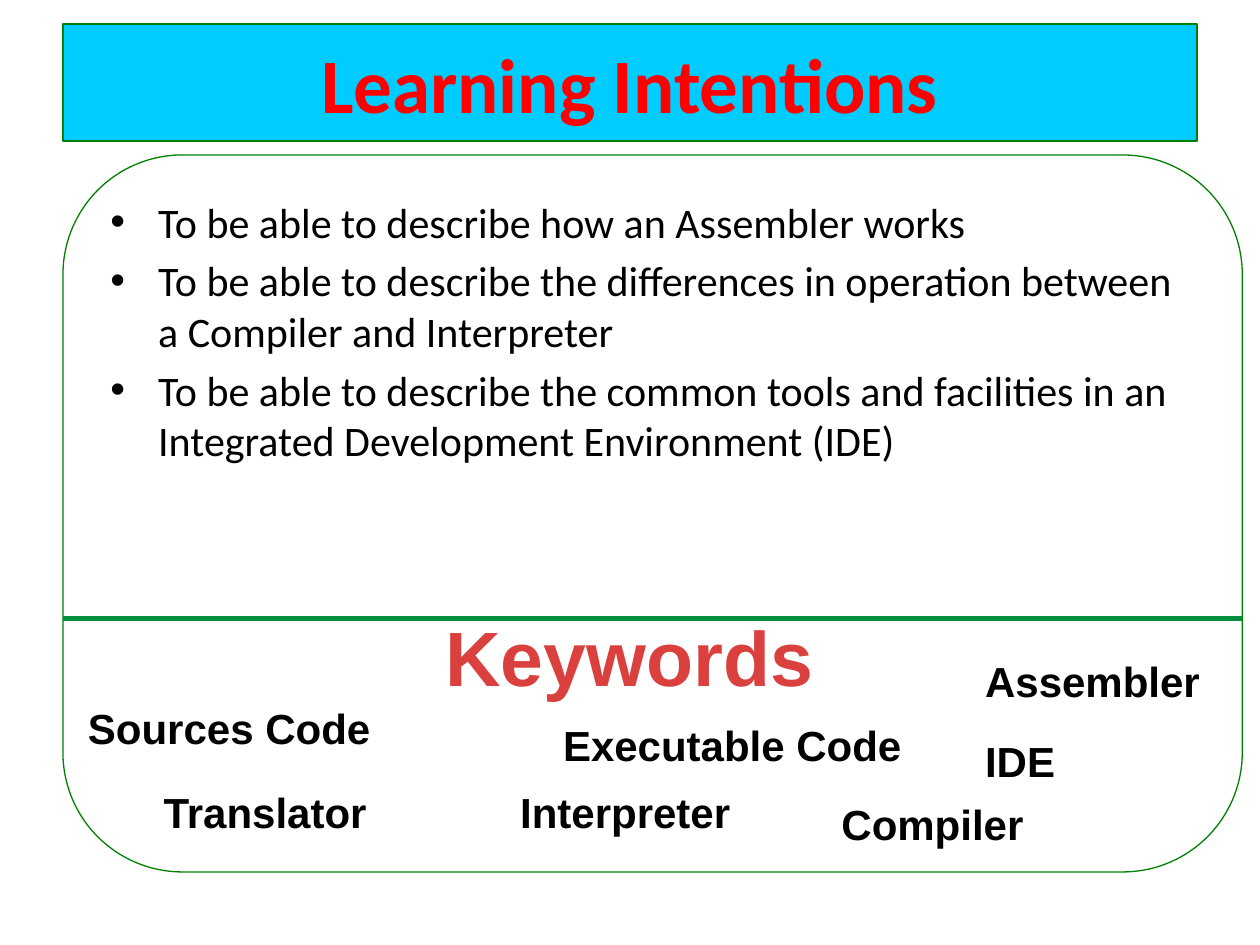
"""Build the Learning Intentions slide with its keywords."""
from lxml.etree import SubElement
from pptx import Presentation
from pptx.dml.color import RGBColor
from pptx.enum.shapes import MSO_CONNECTOR as Link, MSO_SHAPE as Shape
from pptx.enum.text import MSO_ANCHOR as Anchor, MSO_AUTO_SIZE as Fit, PP_ALIGN as Align
from pptx.oxml.ns import qn
from pptx.util import Inches, Pt

CYAN = RGBColor(0x00, 0xCC, 0xFF)
RED = RGBColor(0xFF, 0x00, 0x00)
ROSE = RGBColor(0xDA, 0x41, 0x3E)
EDGE = RGBColor(0x00, 0x80, 0x00)
GREEN = RGBColor(0x00, 0x8E, 0x40)
BLACK = RGBColor(0x00, 0x00, 0x00)

TITLE = "Learning Intentions"
AIMS = [
    "To be able to describe how an Assembler works",
    "To be able to describe the differences in operation between a Compiler and Interpreter",
    "To be able to describe the common tools and facilities in an "
    "Integrated Development Environment (IDE)",
]
HEAD = ("Keywords", 3.42, 4.79, 3.15)
WORDS = [
    ("Sources Code", 0.6, 5.53, 2.47),
    ("Executable Code", 4.37, 5.66, 2.91),
    ("Translator", 1.2, 6.19, 1.83),
    ("Compiler", 6.58, 6.29, 1.66),
    ("Interpreter", 4.03, 6.19, 1.89),
    ("Assembler", 7.72, 5.15, 1.93),
    ("IDE", 7.72, 5.79, 0.76),
]
LEFT, WIDE, RULE = 0.5, 9.36, 4.91
INDENT = 0.38

BIG = dict(name="Calibri", size=Pt(44), bold=True)
PLAIN = dict(name="Calibri", size=Pt(24), bold=False)
BOLD = dict(name="Arial", size=Pt(24), bold=True)
LARGE = dict(name="Arial", size=Pt(44), bold=True)


def style(para, form, color):
    for key, value in form.items():
        setattr(para.font, key, value)
    para.font.color.rgb = color


def panel(slide, kind, *place):
    shape = slide.shapes.add_shape(kind, *map(Inches, place))
    shape.shadow.inherit = False
    shape.fill.background()
    shape.line.color.rgb = EDGE
    shape.line.width = Pt(0.75)
    return shape


def bullet(para):
    props = para._p.get_or_add_pPr()
    props.set("marL", str(Inches(INDENT)))
    props.set("indent", str(-Inches(INDENT)))
    SubElement(props, qn("a:buFont"), typeface="Arial")
    SubElement(props, qn("a:buChar"), char="•")


def label(slide, item, high, form, color, align):
    text, *place = item
    frame = slide.shapes.add_textbox(*map(Inches, (*place, high))).text_frame
    frame.word_wrap = False
    frame.auto_size = Fit.SHAPE_TO_FIT_TEXT
    para = frame.paragraphs[0]
    para.text, para.alignment = text, align
    style(para, form, color)


def main():
    deck = Presentation()
    deck.slide_width, deck.slide_height = Inches(10), Inches(7.5)
    slide = deck.slides.add_slide(deck.slide_layouts[6])

    title = panel(slide, Shape.RECTANGLE, LEFT, 0.19, 9, 0.93)
    title.fill.solid()
    title.fill.fore_color.rgb = CYAN
    title.text_frame.vertical_anchor = Anchor.MIDDLE
    para = title.text_frame.paragraphs[0]
    para.text, para.alignment = TITLE, Align.CENTER
    style(para, BIG, RED)

    body = panel(slide, Shape.ROUNDED_RECTANGLE, LEFT, 1.23, WIDE, 5.69)
    frame = body.text_frame
    frame.word_wrap = True
    frame.vertical_anchor = Anchor.TOP
    for row, aim in enumerate(AIMS):
        para = frame.add_paragraph() if row else frame.paragraphs[0]
        para.text, para.alignment = aim, Align.LEFT
        para.space_before = Pt(4.8 if row else 0)
        bullet(para)
        style(para, PLAIN, BLACK)

    ends = (LEFT, RULE, LEFT + WIDE, RULE)
    rule = slide.shapes.add_connector(Link.STRAIGHT, *map(Inches, ends))
    rule.line.color.rgb = GREEN
    rule.line.width = Pt(3)
    SubElement(rule._element.spPr, qn("a:effectLst"))

    label(slide, HEAD, 0.84, LARGE, ROSE, Align.CENTER)
    for word in WORDS:
        label(slide, word, 0.5, BOLD, BLACK, Align.LEFT)
    deck.save("out.pptx")


if __name__ == "__main__":
    main()
